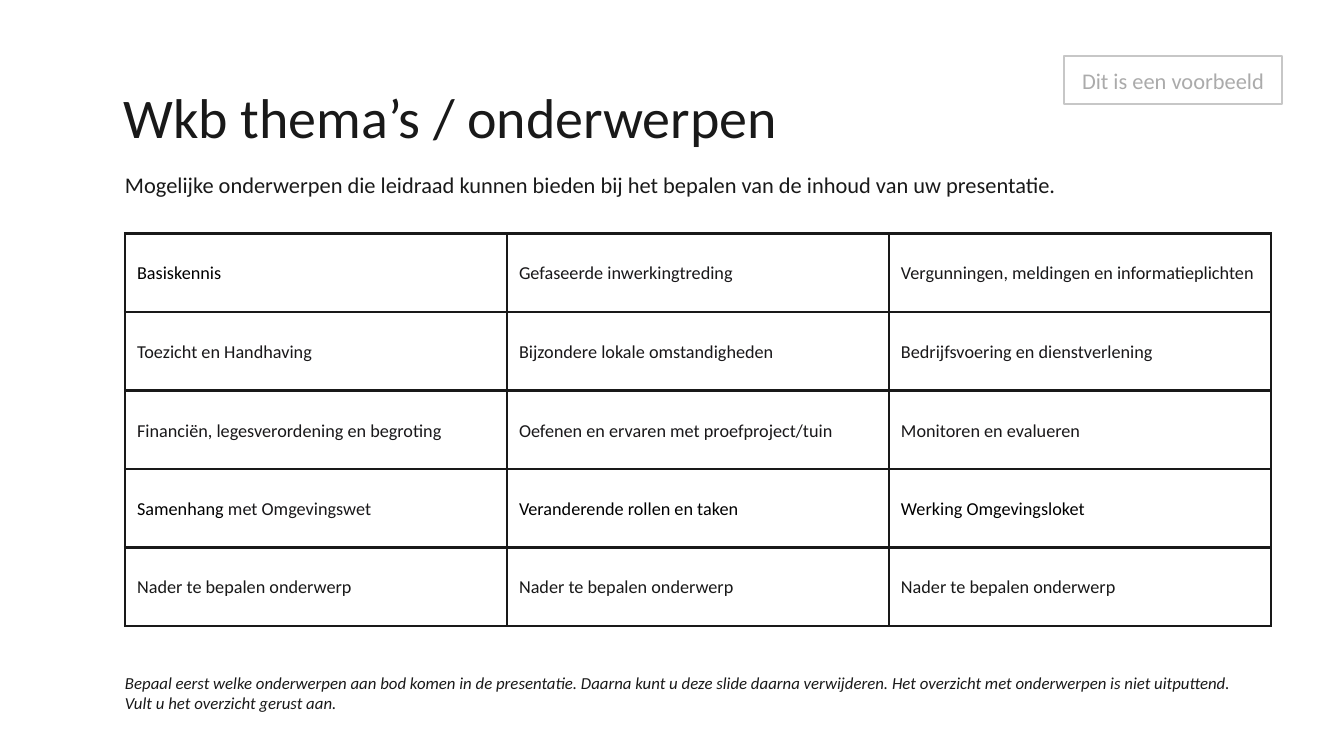
from lxml.etree import SubElement
from pptx import Presentation
from pptx.dml.color import RGBColor
from pptx.enum.shapes import MSO_SHAPE as Shape
from pptx.enum.text import MSO_ANCHOR as Anchor, PP_ALIGN as Align
from pptx.oxml.ns import qn
from pptx.util import Cm, Pt

COLORS = {"ink": "191919", "cell": "19181A", "black": "000000",
          "badge_line": "C7C7C7", "badge_text": "ABABAB"}
FONT = "Calibri"

TITLE = "Wkb thema’s / onderwerpen"
INTRO = ("Mogelijke onderwerpen die leidraad kunnen bieden bij het bepalen "
         "van de inhoud van uw presentatie.")
BADGE = "Dit is een voorbeeld"
NOTES = [
    "Bepaal eerst welke onderwerpen aan bod komen in de presentatie. Daarna kunt u deze "
    "slide daarna verwijderen. Het overzicht met onderwerpen is niet uitputtend.",
    "Vult u het overzicht gerust aan.",
]
OPEN_TOPIC = [("Nader te bepalen onderwerp", "ink")]
TOPICS = [
    [[("Basiskennis", "black")],
     [("Gefaseerde inwerkingtreding", "cell")],
     [("Vergunningen, meldingen en informatieplichten", "cell")]],
    [[("Toezicht en Handhaving", "cell")],
     [("Bijzondere lokale omstandigheden", "cell")],
     [("Bedrijfsvoering en dienstverlening", "cell")]],
    [[("Financiën, legesverordening en begroting", "cell")],
     [("Oefenen en ervaren met proefproject/tuin", "cell")],
     [("Monitoren en evalueren", "cell")]],
    [[("Samenhang ", "black"), ("met Omgevingswet", "cell")],
     [("Veranderende rollen en taken", "black")],
     [("Werking Omgevingsloket", "black")]],
    [OPEN_TOPIC] * 3,
]

LEFT, COLUMN_WIDTH, ROW_HEIGHT = Cm(6.3), Cm(19.25), Cm(3.96)


def rgb(name):
    return RGBColor.from_string(COLORS[name])


def set_font(font, size, color, italic=None):
    font.name, font.size, font.italic = FONT, Pt(size), italic
    font.color.rgb = rgb(color)


def set_insets(frame, inset):
    frame.margin_left = frame.margin_top = inset
    frame.margin_right = frame.margin_bottom = inset


def write_lines(frame, lines, size, color, italic=None):
    frame.word_wrap = True
    for index, line in enumerate(lines):
        para = frame.paragraphs[0] if index == 0 else frame.add_paragraph()
        para.text = line
        set_font(para.font, size, color, italic)


def add_text(slide, place, lines, size, italic=None):
    frame = slide.shapes.add_textbox(*place).text_frame
    set_insets(frame, 0)
    write_lines(frame, lines, size, "ink", italic)
    return frame


def add_badge(slide):
    badge = slide.shapes.add_shape(Shape.RECTANGLE, Cm(53.64), Cm(2.84), Cm(10.97), Cm(2.39))
    badge.shadow.inherit = False
    badge.fill.background()
    badge.line.color.rgb = rgb("badge_line")
    badge.line.width = Pt(3)
    frame = badge.text_frame
    set_insets(frame, Cm(0.36))
    frame.vertical_anchor = Anchor.MIDDLE
    write_lines(frame, [BADGE], 32, "badge_text")
    frame.paragraphs[0].alignment = Align.CENTER


def add_borders(cell):
    properties = cell._tc.get_or_add_tcPr()
    for position, side in enumerate(("lnL", "lnR", "lnT", "lnB")):
        line = SubElement(properties, qn(f"a:{side}"), w=str(Pt(4)))
        fill = SubElement(line, qn("a:solidFill"))
        SubElement(fill, qn("a:srgbClr"), val=COLORS["ink"])
        properties.insert(position, line)


def fill_cell(cell, spans, is_last_row):
    cell.fill.background()
    add_borders(cell)
    cell.vertical_anchor = Anchor.MIDDLE
    set_insets(cell, Cm(0.25))
    para = cell.text_frame.paragraphs[0]
    para._p.get_or_add_pPr().set("marL", str(Cm(0.36)))
    if not is_last_row:
        para.line_spacing, para.space_before = 1.1, Pt(12)
    for text, color in spans:
        span = para.add_run()
        span.text = text
        set_font(span.font, 26, color)


def add_topics(slide):
    rows, columns = len(TOPICS), len(TOPICS[0])
    table = slide.shapes.add_table(rows, columns, LEFT, Cm(11.76),
                                   COLUMN_WIDTH * columns, ROW_HEIGHT * rows).table
    table.first_row = table.horz_banding = False
    for column in table.columns:
        column.width = COLUMN_WIDTH
    for row, topics in enumerate(TOPICS):
        table.rows[row].height = ROW_HEIGHT
        for column, spans in enumerate(topics):
            fill_cell(table.cell(row, column), spans, row == rows - 1)


def main():
    deck = Presentation()
    deck.slide_width, deck.slide_height = Cm(67.74), Cm(38.1)
    slide = deck.slides.add_slide(deck.slide_layouts[6])
    title = add_text(slide, (Cm(6.22), Cm(3.96), Cm(57.07), Cm(4.24)), [TITLE], 80)
    title.vertical_anchor = Anchor.MIDDLE
    title.paragraphs[0].line_spacing = 0.9
    add_text(slide, (LEFT, Cm(8.61), Cm(57.07), Cm(4.24)), [INTRO], 32)
    add_topics(slide)
    add_text(slide, (LEFT, Cm(33.88), Cm(58.65), Cm(2.49)), NOTES, 24, True)
    add_badge(slide)
    deck.save("out.pptx")


if __name__ == "__main__":
    main()
